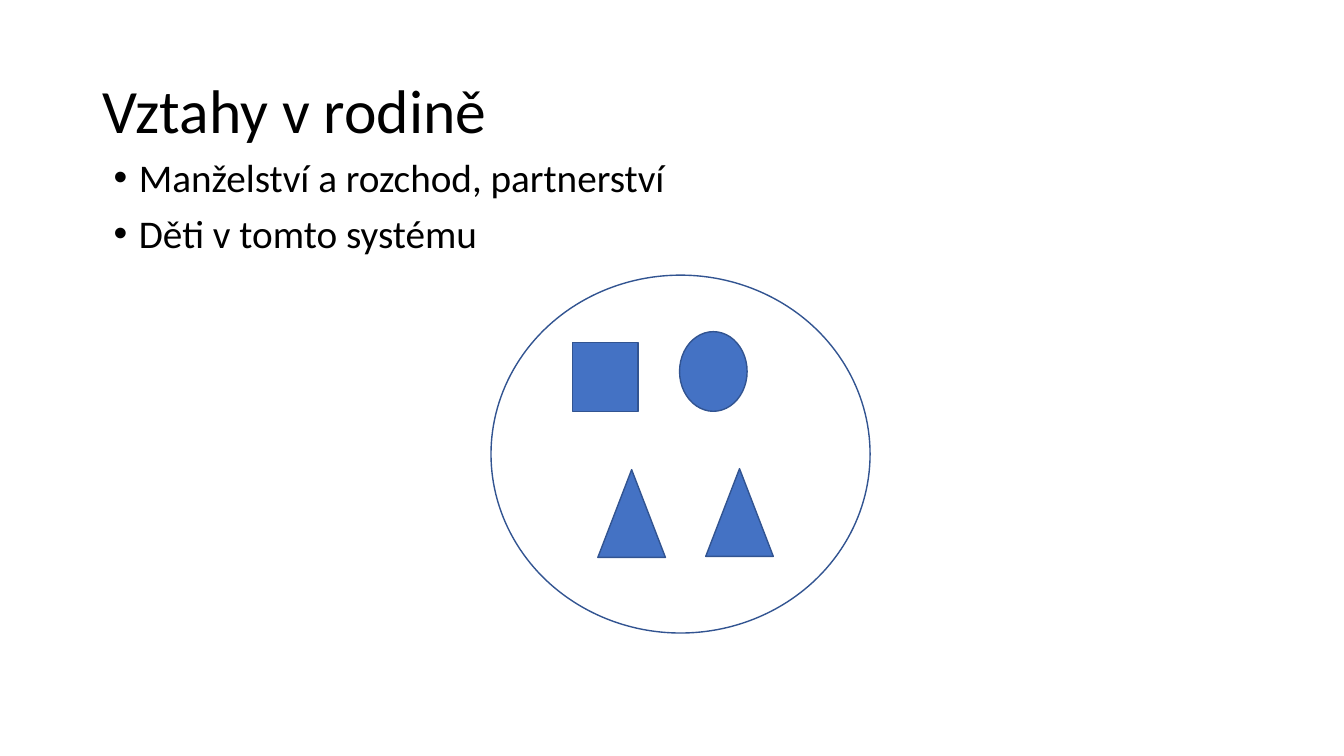
from lxml import etree
from pptx import Presentation
from pptx import util as u
from pptx.dml.color import RGBColor
from pptx.enum import shapes, text
from pptx.oxml.ns import qn

# Content: lengths in px, 100 px to the inch
TITLE = "Vztahy v rodině"
BULLETS = ["Manželství a rozchod, partnerství", "Děti v tomto systému"]
TITLE_BOX = (92, 40, 1150, 145)
BULLETS_BOX = (103, 152, 1150, 476)
KIND = shapes.MSO_SHAPE
FAMILY_CIRCLE = (KIND.OVAL, (487, 273, 376, 355))
FAMILY_MEMBERS = [
    (KIND.RECTANGLE, (568, 340, 65, 68)),
    (KIND.OVAL, (674, 329, 67, 79)),
    (KIND.ISOSCELES_TRIANGLE, (593, 466, 67, 87)),
    (KIND.ISOSCELES_TRIANGLE, (700, 465, 67, 87)),
]

FONT = "Calibri"
BLACK = RGBColor(0x00, 0x00, 0x00)
BLUE = RGBColor(0x44, 0x72, 0xC4)
DARK_BLUE = RGBColor(0x32, 0x54, 0x91)
INDENT = 25


def px(length):
    return u.Emu(length * 9144)


def format_paragraph(paragraph, size):
    paragraph.alignment = text.PP_ALIGN.LEFT
    paragraph.line_spacing = 0.9
    for run in paragraph.runs:
        run.font.name = FONT
        run.font.size = u.Pt(size)
        run.font.color.rgb = BLACK


def add_bullet(paragraph):
    properties = paragraph._p.get_or_add_pPr()
    properties.set("marL", str(px(INDENT)))
    properties.set("indent", str(-px(INDENT)))
    etree.SubElement(properties, qn("a:buFont"), typeface="Arial")
    etree.SubElement(properties, qn("a:buChar"), char="•")


def add_figure(slide, kind, box, fill=None):
    shape = slide.shapes.add_shape(kind, *map(px, box))
    shape.shadow.inherit = False
    if fill is None:
        shape.fill.background()
    else:
        shape.fill.solid()
        shape.fill.fore_color.rgb = fill
    shape.line.color.rgb = DARK_BLUE
    shape.line.width = u.Pt(1)


def main():
    presentation = Presentation()
    presentation.slide_width, presentation.slide_height = px(1333), px(750)
    slide = presentation.slides.add_slide(presentation.slide_layouts[5])

    # Title
    title = slide.shapes.title
    title.left, title.top, title.width, title.height = map(px, TITLE_BOX)
    title.text_frame.text = TITLE
    title.text_frame.auto_size = text.MSO_AUTO_SIZE.NONE
    title.text_frame.vertical_anchor = text.MSO_ANCHOR.MIDDLE
    format_paragraph(title.text_frame.paragraphs[0], 44)

    # Bullets
    frame = slide.shapes.add_textbox(*map(px, BULLETS_BOX)).text_frame
    frame.word_wrap = True
    frame.text = "\n".join(BULLETS)
    for paragraph in frame.paragraphs:
        format_paragraph(paragraph, 28)
        paragraph.space_before = u.Pt(10)
        add_bullet(paragraph)

    # Family diagram
    add_figure(slide, *FAMILY_CIRCLE)
    for kind, box in FAMILY_MEMBERS:
        add_figure(slide, kind, box, BLUE)

    presentation.save("out.pptx")


if __name__ == "__main__":
    main()
